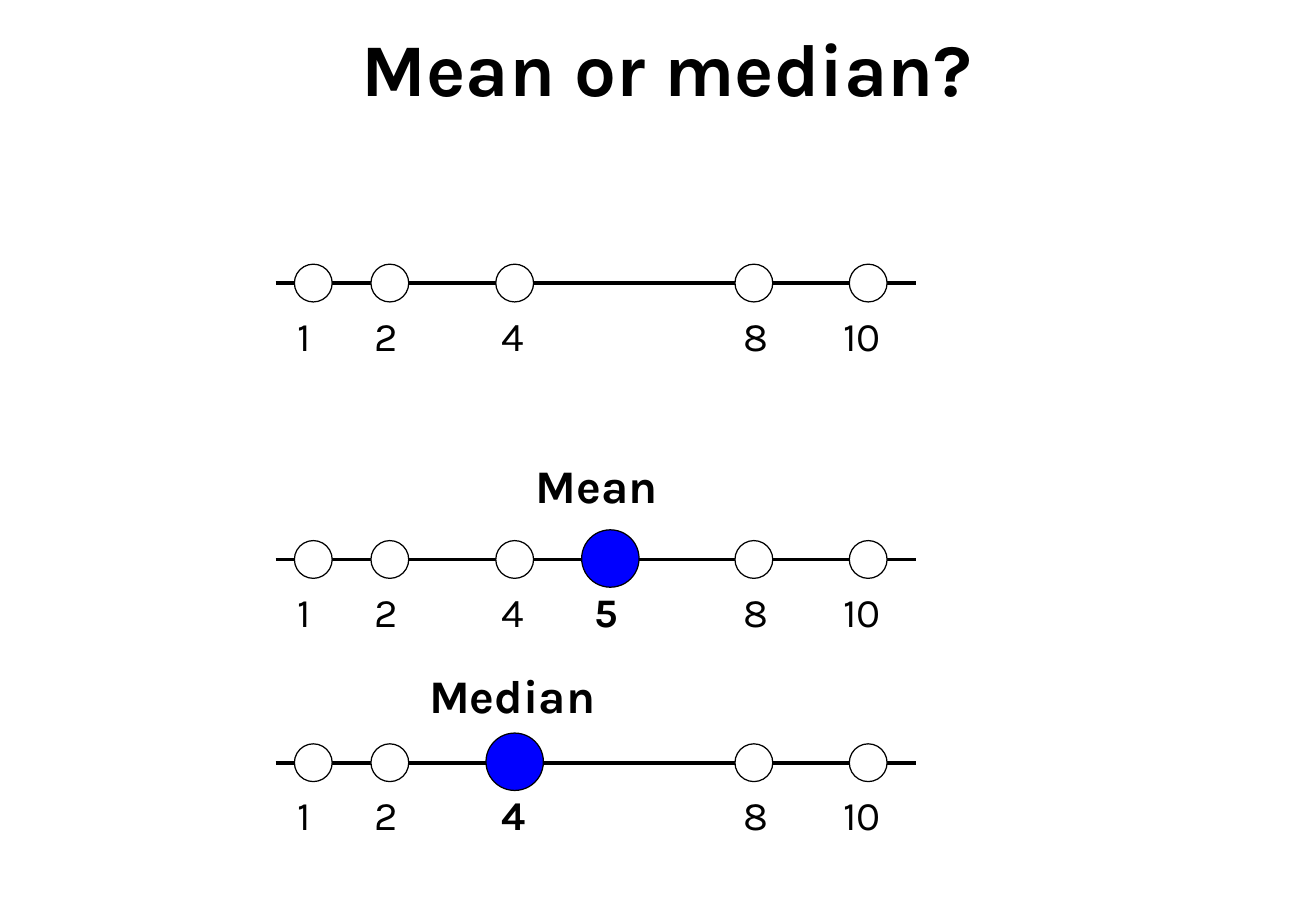
from lxml.etree import SubElement
from pptx import Presentation
from pptx.dml.color import RGBColor
from pptx.enum.shapes import MSO_CONNECTOR, MSO_SHAPE
from pptx.enum.text import MSO_ANCHOR, MSO_AUTO_SIZE, PP_ALIGN
from pptx.oxml.ns import qn
from pptx.util import Cm, Pt

FONT = "Karla"
BLACK, WHITE, BLUE = "000000", "FFFFFF", "0000FF"
AXIS_LEFT, AXIS_RIGHT = 5.76, 19.15
DOT, BIG_DOT = 0.79, 1.2
LABEL_DROP = 0.58

# value: (centre of its dot, left of its label), in cm
PLACES = {
    1: (6.55, 6.22),
    2: (8.15, 7.82),
    4: (10.76, 10.49),
    5: (12.76, 12.42),
    8: (15.76, 15.54),
    10: (18.15, 17.63),
}


def color(value):
    return RGBColor.from_string(value)


def add_text(page, text, left, top, width, height, size, bold=False):
    """Add one line of text in a box without margins."""
    box = page.shapes.add_textbox(Cm(left), Cm(top), Cm(width), Cm(height))
    frame = box.text_frame
    frame.word_wrap = False
    frame.auto_size = MSO_AUTO_SIZE.SHAPE_TO_FIT_TEXT
    frame.margin_left = frame.margin_right = 0
    frame.margin_top = frame.margin_bottom = 0
    span = frame.paragraphs[0].add_run()
    span.text = text
    span.font.name = FONT
    span.font.size = Pt(size)
    span.font.bold = bold
    span.font.color.rgb = color(BLACK)
    return frame


def add_title(page, text):
    frame = add_text(page, text, 3.05, 0.33, 21.8, 2.13, 44, bold=True)
    frame.word_wrap = True
    frame.auto_size = MSO_AUTO_SIZE.NONE
    frame.vertical_anchor = MSO_ANCHOR.MIDDLE
    frame.paragraphs[0].alignment = PP_ALIGN.CENTER


def add_axis(page, height):
    axis = page.shapes.add_connector(
        MSO_CONNECTOR.STRAIGHT, Cm(AXIS_LEFT), Cm(height), Cm(AXIS_RIGHT), Cm(height)
    )
    axis.line.color.rgb = color(BLACK)
    axis.line.width = Pt(2.25)
    SubElement(axis._element.spPr, qn("a:effectLst"))


def add_dot(page, center, height, size, fill):
    dot = page.shapes.add_shape(
        MSO_SHAPE.OVAL, Cm(center - size / 2), Cm(height - size / 2), Cm(size), Cm(size)
    )
    dot.shadow.inherit = False
    dot.fill.solid()
    dot.fill.fore_color.rgb = color(fill)
    dot.line.color.rgb = color(BLACK)
    dot.line.width = Pt(0.75)


def add_number_line(page, height, values, marked=None):
    """Draw an axis with labelled dots; the marked value is large, blue and bold."""
    add_axis(page, height)
    for value in values:
        center, label_left = PLACES[value]
        is_marked = value == marked
        if is_marked:
            add_dot(page, center, height - 0.02, BIG_DOT, BLUE)
        else:
            add_dot(page, center, height, DOT, WHITE)
        width = 0.53 if is_marked else 0.46 * len(str(value))
        add_text(page, str(value), label_left, height + LABEL_DROP, width, 1.02, 24, is_marked)


def main():
    deck = Presentation()
    deck.slide_width, deck.slide_height = Cm(27.51), Cm(19.05)
    page = deck.slides.add_slide(deck.slide_layouts[6])
    values = [1, 2, 4, 8, 10]

    add_title(page, "Mean or median?")
    add_number_line(page, 5.92, values)
    add_text(page, "Mean", 11.2, 9.55, 2.69, 1.19, 27.7, bold=True)
    add_number_line(page, 11.7, sorted(values + [5]), marked=5)
    add_text(page, "Median", 8.97, 13.94, 3.61, 1.19, 27.7, bold=True)
    add_number_line(page, 15.95, values, marked=4)

    deck.save("out.pptx")


if __name__ == "__main__":
    main()
